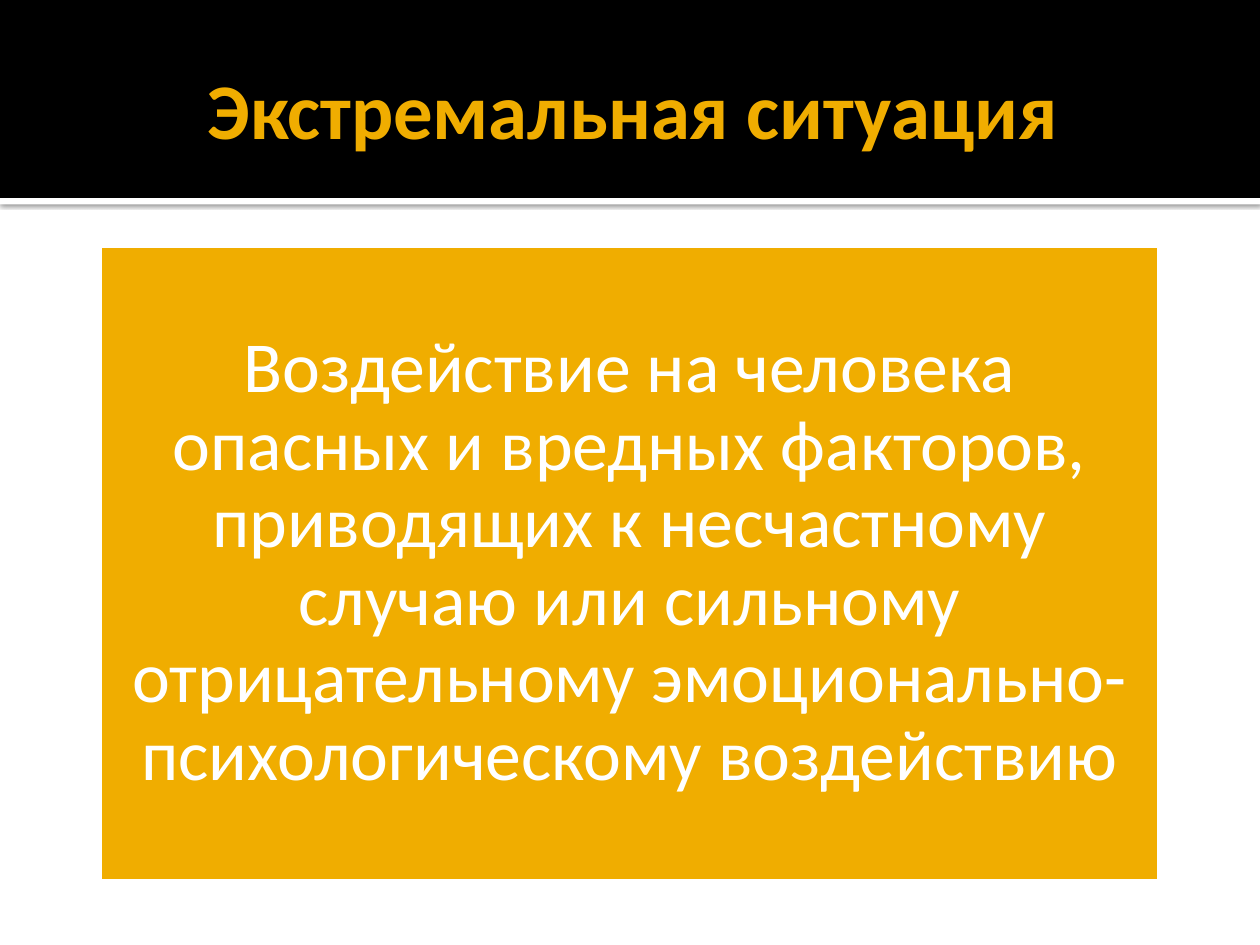
import pptx
import pptx.util
import pptx.dml.color
import pptx.enum.shapes
import pptx.enum.text
import pptx.oxml
import pptx.oxml.ns

Cm, Pt = pptx.util.Cm, pptx.util.Pt
BLACK = pptx.dml.color.RGBColor(0x00, 0x00, 0x00)
WHITE = pptx.dml.color.RGBColor(0xFF, 0xFF, 0xFF)
AMBER = pptx.dml.color.RGBColor(0xF0, 0xAD, 0x00)
FONT = "Calibri"
SLIDE_WIDTH, SLIDE_HEIGHT = Cm(25.4), Cm(19.05)


def add_rect(slide, box, fill, line=None, line_width=0):
    rect = slide.shapes.add_shape(pptx.enum.shapes.MSO_SHAPE.RECTANGLE, *box)
    rect.shadow.inherit = False
    rect.fill.solid()
    rect.fill.fore_color.rgb = fill
    if line is None:
        rect.line.fill.background()
    else:
        rect.line.color.rgb = line
        rect.line.width = Pt(line_width)
    return rect


def write_text(shape, text, size, color, bold=False, spacing=1.0, insets=(0.25, 0.13, 0.13, 0.13)):
    """Write one centred paragraph; insets are left, top, right, bottom in cm."""
    frame = shape.text_frame
    frame.word_wrap = True
    frame.vertical_anchor = pptx.enum.text.MSO_ANCHOR.MIDDLE
    frame.margin_left, frame.margin_top, frame.margin_right, frame.margin_bottom = map(Cm, insets)
    paragraph = frame.paragraphs[0]
    paragraph.alignment = pptx.enum.text.PP_ALIGN.CENTER
    paragraph.line_spacing = spacing
    run = paragraph.add_run()
    run.text = text
    run.font.name = FONT
    run.font.size = Pt(size)
    run.font.bold = bold
    run.font.color.rgb = color


def add_drop_shadow(shape):
    properties = shape.fill._xPr
    properties.remove(properties.find(pptx.oxml.ns.qn("a:effectLst")))
    properties.append(pptx.oxml.parse_xml(
        f'<a:effectLst {pptx.oxml.ns.nsdecls("a")}>'
        f'<a:outerShdw blurRad="{Pt(2.5)}" dist="{Pt(0.8)}" dir="5400000" rotWithShape="0">'
        f'<a:srgbClr val="{BLACK}"><a:alpha val="60000"/></a:srgbClr>'
        '</a:outerShdw></a:effectLst>'))


def add_header(slide, left, top, width, height, title):
    # White rule with a shadow under the black band
    rule = add_rect(slide, (left, top + height, width, Cm(0.13)), WHITE)
    add_drop_shadow(rule)
    add_rect(slide, (left, top, width, height), BLACK)

    # Title
    margin = Cm(1.27)
    heading = slide.shapes.add_textbox(left + margin, top + Cm(0.43), width - 2 * margin, Cm(3.48))
    write_text(heading, title, size=45, color=AMBER, bold=True)


def add_definition(slide, left, top, width, height, definition):
    panel = add_rect(slide, (left, top, width, height), AMBER, line=WHITE, line_width=3.78)
    write_text(panel, definition, size=41, color=WHITE, spacing=0.9, insets=(0.43,) * 4)


def main():
    presentation = pptx.Presentation()
    presentation.slide_width, presentation.slide_height = SLIDE_WIDTH, SLIDE_HEIGHT
    slide = presentation.slides.add_slide(presentation.slide_layouts[6])

    add_header(slide, 0, 0, SLIDE_WIDTH, Cm(3.99), "Экстремальная ситуация")
    add_definition(
        slide, Cm(2), Cm(4.93), Cm(21.4), Cm(12.85),
        "Воздействие на человека опасных и вредных факторов, приводящих к несчастному "
        "случаю или сильному отрицательному эмоционально-психологическому воздействию")

    presentation.save("out.pptx")


if __name__ == "__main__":
    main()
